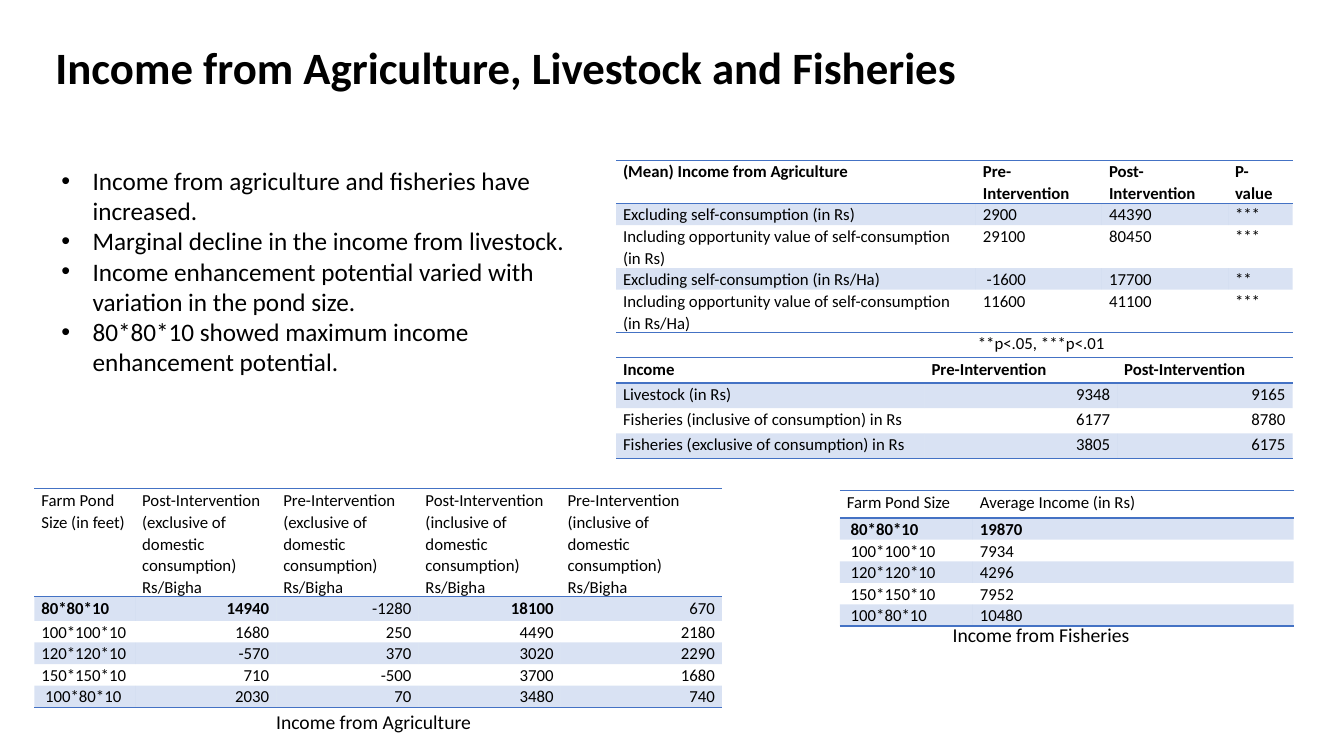
from dataclasses import dataclass

from lxml.etree import SubElement
from pptx import Presentation
from pptx.dml.color import RGBColor
from pptx.enum.text import MSO_ANCHOR, MSO_AUTO_SIZE, PP_ALIGN
from pptx.oxml.ns import qn
from pptx.slide import Slide
from pptx.table import _Cell
from pptx.text.text import TextFrame, _Paragraph
from pptx.util import Inches, Pt

BLACK = RGBColor(0x00, 0x00, 0x00)
BLUE = RGBColor(0x44, 0x72, 0xC4)
FONT = "Calibri"
PLAIN = "{2D5ABB26-0587-4C30-8999-92F81FD0307C}"


@dataclass(frozen=True)
class Grid:
    left: float
    top: float
    height: float
    cols: list[float]
    rows: list[float]
    cells: list[list[str]]
    bold: set[tuple[int, int]]
    head: PP_ALIGN = PP_ALIGN.LEFT
    body: PP_ALIGN = PP_ALIGN.LEFT


@dataclass(frozen=True)
class Label:
    left: float
    top: float
    width: float
    height: float
    size: int
    lines: list[str]
    bullet: bool = False


SPAN = "consumption) Rs/Bigha"

GRIDS = [
    Grid(6.11, 1.59, 1.67, [3.57, 1.25, 1.25, 0.64], [0.39] + [0.19] * 4, [
        ["(Mean) Income from Agriculture", "Pre-Intervention", "Post-Intervention", "P-value"],
        ["Excluding self-consumption (in Rs)", "2900", "44390", "***"],
        ["Including opportunity value of self-consumption (in Rs)", "29100", "80450", "***"],
        ["Excluding self-consumption (in Rs/Ha)", " -1600", "17700", "**"],
        ["Including opportunity value of self-consumption (in Rs/Ha)", "11600", "41100", "***"],
    ], {(0, col) for col in range(4)}),
    Grid(6.11, 3.55, 1.02, [3.06, 1.91, 1.74], [0.25] * 4, [
        ["Income", "Pre-Intervention", "Post-Intervention"],
        ["Livestock (in Rs)", "9348", "9165"],
        ["Fisheries (inclusive of consumption) in Rs", "6177", "8780"],
        ["Fisheries (exclusive of consumption) in Rs", "3805", "6175"],
    ], {(0, col) for col in range(3)}, body=PP_ALIGN.RIGHT),
    Grid(0.34, 4.85, 2.12, [1, 1.4, 1.41, 1.41, 1.6], [1, 0.24] + [0.19] * 4, [
        ["Farm Pond Size (in feet)"] + [
            f"{when}-Intervention ({kind} of domestic {SPAN}"
            for kind in ("exclusive", "inclusive") for when in ("Post", "Pre")
        ],
        ["80*80*10", "14940", "-1280", "18100", "670"],
        ["100*100*10", "1680", "250", "4490", "2180"],
        ["120*120*10", "-570", "370", "3020", "2290"],
        ["150*150*10", "710", "-500", "3700", "1680"],
        [" 100*80*10", "2030", "70", "3480", "740"],
    ], {(1, 0), (1, 1), (1, 3)}, body=PP_ALIGN.RIGHT),
    Grid(8.33, 4.87, 1.29, [1.32, 3.18], [0.27, 0.14, 0.14, 0.14, 0.16, 0.14], [
        ["Farm Pond Size", "Average Income (in Rs)"],
        [" 80*80*10", "19870"],
        [" 100*100*10", "7934"],
        [" 120*120*10", "4296"],
        [" 150*150*10", "7952"],
        [" 100*80*10", "10480"],
    ], {(1, 0), (1, 1)}, PP_ALIGN.JUSTIFY, PP_ALIGN.JUSTIFY),
]

LABELS = [
    Label(9.6, 3.25, 2.52, 0.3, 12, ["**p<.05, ***p<.01"]),
    Label(0.51, 1.59, 5.27, 2.22, 18, [
        "Income from agriculture and fisheries have increased.",
        "Marginal decline in the income from livestock.",
        "Income enhancement potential varied with variation in the pond size.",
        "80*80*10 showed maximum income enhancement potential.",
    ], True),
    Label(2.64, 6.99, 3.47, 0.34, 14, ["Income from Agriculture"]),
    Label(9.35, 6.13, 3.47, 0.34, 14, ["Income from Fisheries"]),
]


def write(para: _Paragraph, text: str, size: int, bold: bool = False) -> None:
    run = para.add_run()
    run.text = text
    run.font.name = FONT
    run.font.size = Pt(size)
    run.font.bold = bold
    run.font.color.rgb = BLACK


def fit(frame: TextFrame) -> None:
    frame.word_wrap = True
    frame.auto_size = MSO_AUTO_SIZE.SHAPE_TO_FIT_TEXT


def dot(para: _Paragraph) -> None:
    props = para._p.get_or_add_pPr()
    props.set("marL", str(Inches(0.31)))
    props.set("indent", str(-Inches(0.31)))
    SubElement(props, qn("a:buFont")).set("typeface", "Arial")
    SubElement(props, qn("a:buChar")).set("char", "•")


def rule(cell: _Cell, side: str) -> None:
    line = SubElement(cell._tc.get_or_add_tcPr(), qn(f"a:{side}"))
    line.set("w", str(Pt(1)))
    fill = SubElement(line, qn("a:solidFill"))
    SubElement(fill, qn("a:srgbClr")).set("val", str(BLUE))


def tint(cell: _Cell) -> None:
    cell.fill.solid()
    cell.fill.fore_color.rgb = BLUE
    color = cell._tc.tcPr.find(f"{qn('a:solidFill')}/{qn('a:srgbClr')}")
    SubElement(color, qn("a:alpha")).set("val", "20000")


def draw_cell(cell: _Cell, grid: Grid, row: int, col: int) -> None:
    cell.margin_left = cell.margin_right = Inches(0.07)
    cell.margin_top = cell.margin_bottom = 0
    if row == 0:
        rule(cell, "lnT")
    if row in (0, len(grid.rows) - 1):
        rule(cell, "lnB")
    if row % 2:
        tint(cell)
    else:
        cell.fill.background()
    para = cell.text_frame.paragraphs[0]
    para.line_spacing = 1.07
    para.alignment = grid.body if row and col else grid.head
    write(para, grid.cells[row][col], 12, (row, col) in grid.bold)


def draw_grid(slide: Slide, grid: Grid) -> None:
    frame = slide.shapes.add_table(
        len(grid.rows), len(grid.cols), Inches(grid.left), Inches(grid.top),
        Inches(sum(grid.cols)), Inches(grid.height))
    table = frame.table
    table.first_row = table.horz_banding = False
    table._tbl.tblPr.find(qn("a:tableStyleId")).text = PLAIN
    for col, width in enumerate(grid.cols):
        table.columns[col].width = Inches(width)
    for row, height in enumerate(grid.rows):
        table.rows[row].height = Inches(height)
        for col in range(len(grid.cols)):
            draw_cell(table.cell(row, col), grid, row, col)
    frame.height = Inches(grid.height)


def draw_label(slide: Slide, label: Label) -> None:
    box = slide.shapes.add_textbox(
        Inches(label.left), Inches(label.top), Inches(label.width), Inches(label.height))
    frame = box.text_frame
    fit(frame)
    for num, text in enumerate(label.lines):
        para = frame.add_paragraph() if num else frame.paragraphs[0]
        if label.bullet:
            dot(para)
        write(para, text, label.size)


def draw_title(slide: Slide) -> None:
    title = slide.shapes.title
    title.left, title.top = Inches(0.45), Inches(0.34)
    title.width, title.height = Inches(12.14), Inches(0.64)
    frame = title.text_frame
    fit(frame)
    frame.vertical_anchor = MSO_ANCHOR.TOP
    para = frame.paragraphs[0]
    para.alignment = PP_ALIGN.LEFT
    write(para, "Income from Agriculture, Livestock and Fisheries", 32, True)


def main() -> None:
    deck = Presentation()
    deck.slide_width, deck.slide_height = Inches(13.33), Inches(7.5)
    slide = deck.slides.add_slide(deck.slide_layouts[5])
    draw_title(slide)
    for grid in GRIDS:
        draw_grid(slide, grid)
    for label in LABELS:
        draw_label(slide, label)
    deck.save("out.pptx")


if __name__ == "__main__":
    main()
